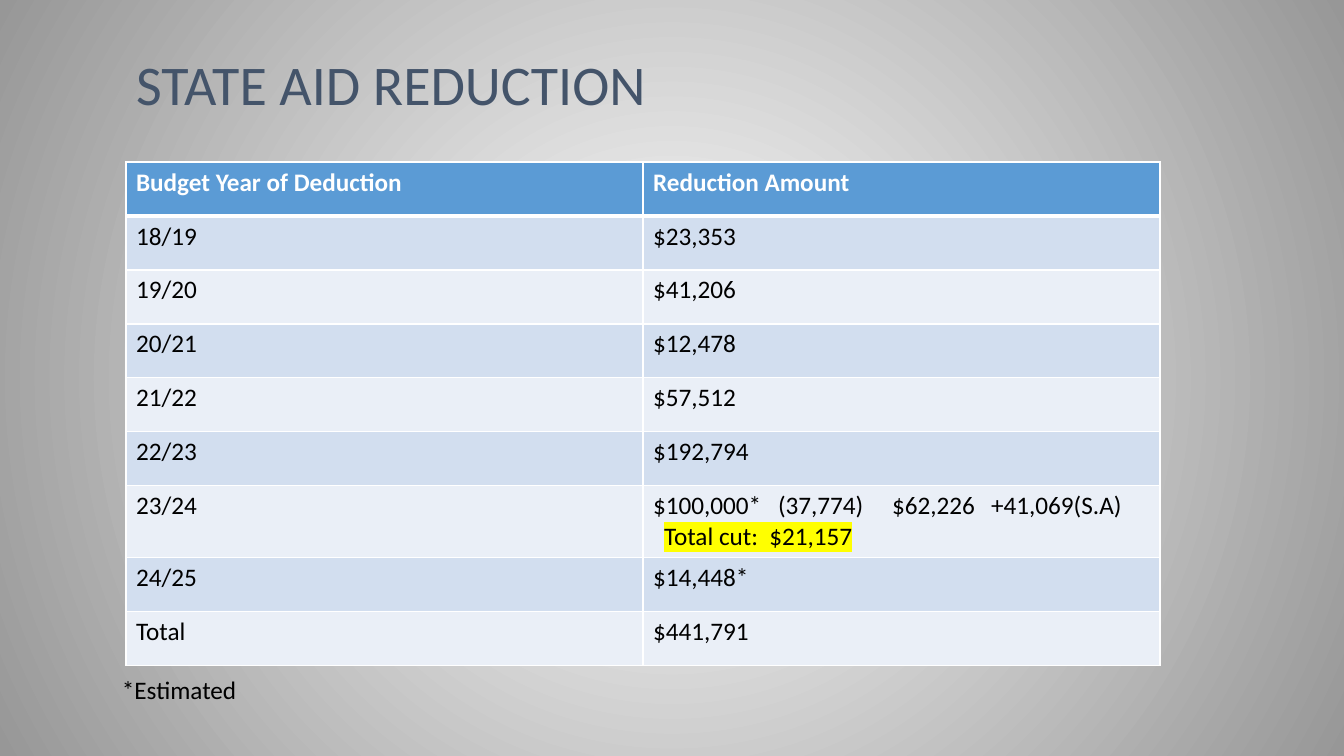
from dataclasses import dataclass

from lxml import etree
from pptx import Presentation, util as u
from pptx.dml.color import RGBColor
from pptx.enum import text
from pptx.oxml.ns import qn

EMU_PER_PX = 914400 / 100.8


@dataclass(frozen=True)
class Theme:
    font: str = "Calibri"
    title_size: int = 40
    body_size: int = 18
    title: str = "44546A"
    ink: str = "000000"
    white: str = "FFFFFF"
    header: str = "5B9BD5"
    bands: tuple[str, str] = ("D2DEEF", "EAEFF7")
    highlight: str = "FFFF00"
    backdrop: tuple[str, str] = ("FFFFFF", "979797")


@dataclass(frozen=True)
class Deduction:
    year: str
    amount: str
    total_cut: str = ""
    height: int = 54


THEME = Theme()
HEADING = Deduction("Budget Year of Deduction", "Reduction Amount")
DEDUCTIONS = [
    Deduction("18/19", "$23,353"),
    Deduction("19/20", "$41,206"),
    Deduction("20/21", "$12,478"),
    Deduction("21/22", "$57,512"),
    Deduction("22/23", "$192,794"),
    Deduction("23/24", "$100,000*\t(37,774)\t$62,226\t+41,069(S.A)",
              "Total cut:  $21,157", 72),
    Deduction("24/25", "$14,448*"),
    Deduction("Total", "$441,791"),
]
AMOUNT_TABS = (125, 239, 338)
TOTAL_CUT_INDENT = 11
COLUMN_WIDTH = 517


def px(length: int) -> u.Emu:
    return u.Emu(round(length * EMU_PER_PX))


def rgb(color: str) -> RGBColor:
    return RGBColor.from_string(color)


def add_solid(parent, color: str) -> None:
    solid = etree.SubElement(parent, qn("a:solidFill"))
    etree.SubElement(solid, qn("a:srgbClr"), val=color)


def write(paragraph, wording: str, color: str, size: int = THEME.body_size,
          bold: bool = False):
    run = paragraph.add_run()
    run.text = wording
    run.font.color.rgb = rgb(color)
    for key, value in {"name": THEME.font, "size": u.Pt(size), "bold": bold}.items():
        setattr(run.font, key, value)
    return run


def highlight(run, color: str) -> None:
    marker = etree.Element(qn("a:highlight"))
    etree.SubElement(marker, qn("a:srgbClr"), val=color)
    run.font._element.find(qn("a:solidFill")).addnext(marker)


def set_tabs(paragraph, stops: tuple[int, ...]) -> None:
    tab_list = etree.SubElement(paragraph._p.get_or_add_pPr(), qn("a:tabLst"))
    for stop in stops:
        etree.SubElement(tab_list, qn("a:tab"), pos=str(px(stop)), algn="l")


def style_cell(cell, fill: str, top: int, bottom: int) -> None:
    # Borders come before the fill in the cell properties
    properties = cell._tc.get_or_add_tcPr()
    for side, width in {"L": 1, "R": 1, "T": top, "B": bottom}.items():
        border = etree.SubElement(properties, qn(f"a:ln{side}"), w=str(u.Pt(width)))
        add_solid(border, THEME.white)
    cell.fill.solid()
    cell.fill.fore_color.rgb = rgb(fill)


def paint_background(slide) -> None:
    fill = slide.background.fill
    fill.gradient()
    for stop, color in zip(fill.gradient_stops, THEME.backdrop):
        stop.color.rgb = rgb(color)
    gradient = slide.element.find(".//" + qn("a:gradFill"))
    gradient.remove(gradient.find(qn("a:lin")))
    circle = etree.SubElement(gradient, qn("a:path"), path="circle")
    etree.SubElement(circle, qn("a:fillToRect"),
                     dict.fromkeys("ltrb", "50000"))


def add_title(slide, wording: str) -> None:
    title = slide.shapes.title
    place = {"left": 126, "top": 28, "width": 1092, "height": 95}
    for key, value in place.items():
        setattr(title, key, px(value))
    title.text_frame.vertical_anchor = text.MSO_ANCHOR.BOTTOM
    paragraph = title.text_frame.paragraphs[0]
    for key, value in {"alignment": text.PP_ALIGN.LEFT, "line_spacing": 0.9}.items():
        setattr(paragraph, key, value)
    write(paragraph, wording, THEME.title, THEME.title_size)


def add_deductions(slide) -> None:
    rows = [HEADING, *DEDUCTIONS]
    height = sum(row.height for row in rows)
    table = slide.shapes.add_table(len(rows), 2, px(126), px(162),
                                   px(2 * COLUMN_WIDTH), px(height)).table
    for index, row in enumerate(rows):
        table.rows[index].height = px(row.height)
        is_heading = index == 0
        fill = THEME.header if is_heading else THEME.bands[(index - 1) % 2]
        color = THEME.white if is_heading else THEME.ink
        for column, wording in enumerate((row.year, row.amount)):
            cell = table.cell(index, column)
            style_cell(cell, fill, top=3 if index == 1 else 1,
                       bottom=3 if is_heading else 1)
            paragraph = cell.text_frame.paragraphs[0]
            write(paragraph, wording, color, bold=is_heading)
            if "\t" in wording:
                set_tabs(paragraph, AMOUNT_TABS)
        if row.total_cut:
            total_cut = table.cell(index, 1).text_frame.add_paragraph()
            total_cut._p.get_or_add_pPr().set("marL", str(px(TOTAL_CUT_INDENT)))
            highlight(write(total_cut, row.total_cut, color), THEME.highlight)


def add_footnote(slide, wording: str) -> None:
    footnote = slide.shapes.add_textbox(px(112), px(669), px(295), px(40))
    footnote.text_frame.word_wrap = True
    write(footnote.text_frame.paragraphs[0], wording, THEME.ink)


def main() -> None:
    deck = Presentation()
    deck.slide_width, deck.slide_height = px(1344), px(756)
    slide = deck.slides.add_slide(deck.slide_layouts[5])
    paint_background(slide)
    add_title(slide, "STATE AID REDUCTION")
    add_deductions(slide)
    add_footnote(slide, "*Estimated")
    deck.save("out.pptx")


if __name__ == "__main__":
    main()
